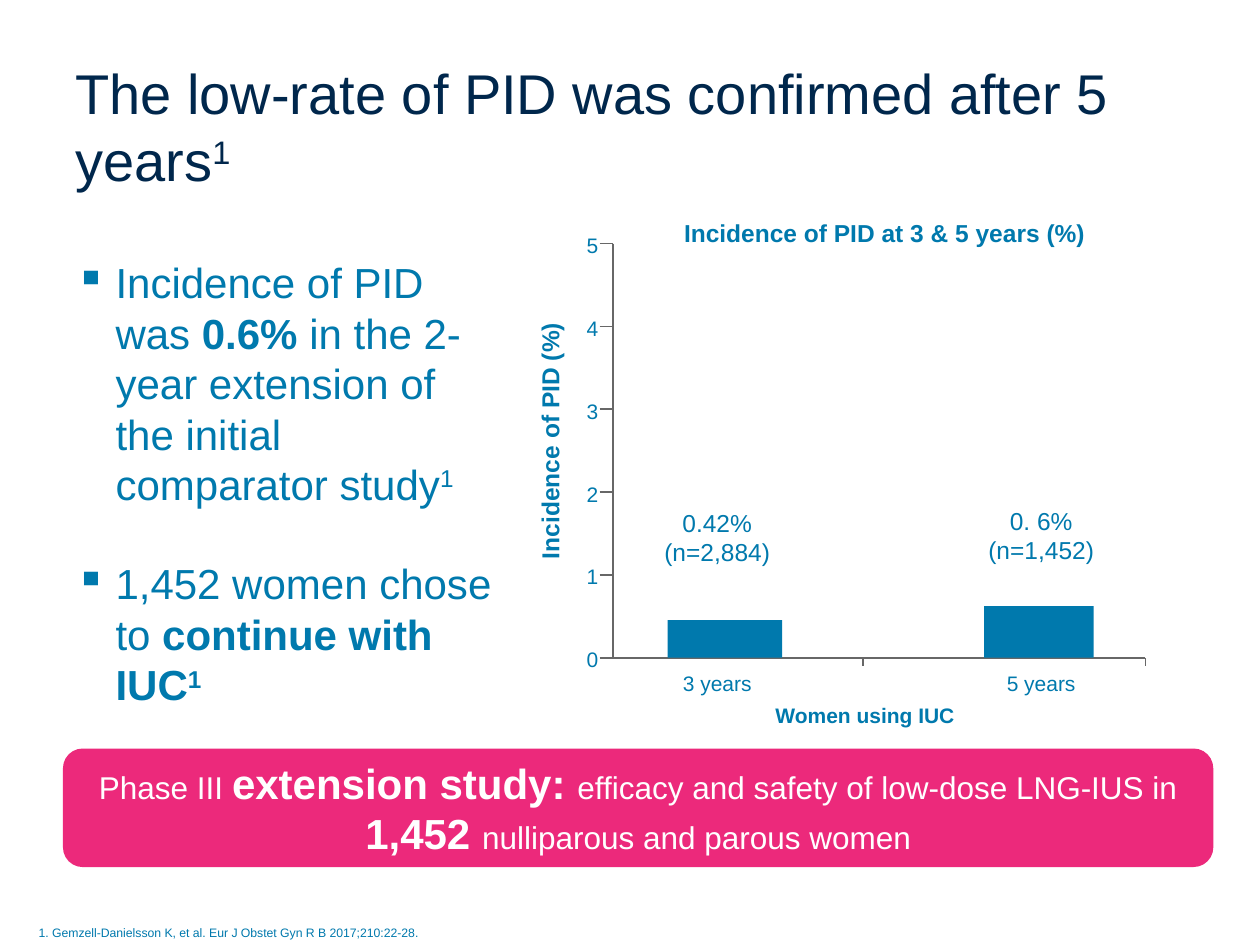
import pptx
import pptx.dml.color
import pptx.enum.shapes
import pptx.enum.text
import pptx.oxml.ns
import pptx.util
from lxml import etree
from pptx.util import Cm

COLORS = {"navy": "00274C", "blue": "0079AD", "pink": "EC297B",
          "white": "FFFFFF", "gray": "676767"}
ALIGN = pptx.enum.text.PP_ALIGN
ANCHOR = pptx.enum.text.MSO_ANCHOR
SHAPE = pptx.enum.shapes.MSO_SHAPE
BOLD = {"bold": True}
SUPER = {"baseline": 30000}


def color(name):
    return pptx.dml.color.RGBColor.from_string(COLORS[name])


class SlideBuilder:
    """Holds the text style and the slide being filled."""

    font_name = "Arial"

    def __init__(self, deck):
        self.page = deck.slides.add_slide(deck.slide_layouts[6])

    def fill_text(self, frame, paragraphs, size, ink="blue", align=ALIGN.LEFT,
                  anchor=ANCHOR.TOP, inset=(0.25, 0.13), wrap=True, bold=False,
                  bullet=None, gap=0):
        """Each paragraph is a list of (text, format values) spans."""
        across, down = (Cm(value) for value in inset)
        layout = {"word_wrap": wrap, "vertical_anchor": anchor,
                  "margin_left": across, "margin_right": across,
                  "margin_top": down, "margin_bottom": down}
        for name, value in layout.items():
            setattr(frame, name, value)
        for index, spans in enumerate(paragraphs):
            para = frame.add_paragraph() if index else frame.paragraphs[0]
            para.alignment = align
            if index:
                para.space_before = pptx.util.Pt(gap)
            if bullet:
                self.add_bullet(para, bullet)
            for text, changes in spans:
                span = para.add_run()
                span.text = text
                span.font.color.rgb = color(ink)
                style = {"name": self.font_name, "size": pptx.util.Pt(size),
                         "bold": bold, **changes}
                baseline = style.pop("baseline", None)
                for name, value in style.items():
                    setattr(span.font, name, value)
                if baseline:
                    span._r.get_or_add_rPr().set("baseline", str(baseline))

    def add_bullet(self, para, character):
        properties = para._p.get_or_add_pPr()
        properties.set("marL", str(Cm(0.81)))
        properties.set("indent", str(Cm(-0.81)))
        mark = etree.SubElement(properties, pptx.oxml.ns.qn("a:buChar"))
        mark.set("char", character)

    def text(self, place, paragraphs, size, rotation=0, **style):
        box = self.page.shapes.add_textbox(*(Cm(value) for value in place))
        box.rotation = rotation
        self.fill_text(box.text_frame, paragraphs, size, **style)

    def label(self, place, words, size, **style):
        """One centred line, or several, without insets."""
        style = {"align": ALIGN.CENTER, "inset": (0, 0), "wrap": False, **style}
        self.text(place, [[(line, {})] for line in words.split("\n")], size, **style)

    def block(self, kind, place, fill):
        shape = self.page.shapes.add_shape(kind, *(Cm(value) for value in place))
        shape.shadow.inherit = False
        shape.fill.solid()
        shape.fill.fore_color.rgb = color(fill)
        shape.line.fill.background()
        return shape

    def line(self, *ends):
        rule = self.page.shapes.add_connector(
            pptx.enum.shapes.MSO_CONNECTOR.STRAIGHT, *(Cm(value) for value in ends))
        rule.line.color.rgb = color("gray")
        rule.line.width = pptx.util.Pt(1)
        etree.SubElement(rule._element.spPr, pptx.oxml.ns.qn("a:effectLst"))


def main():
    deck = pptx.Presentation()
    deck.slide_width, deck.slide_height = Cm(25.4), Cm(19.05)
    slide = SlideBuilder(deck)

    # Title and key points
    slide.text((1.27, 0.84, 22.86, 3.38),
               [[("The low-rate of PID was confirmed after 5 years", {}),
                 ("1", SUPER)]],
               32, ink="navy", anchor=ANCHOR.MIDDLE)
    slide.text((1.27, 5.05, 8.89, 9.07),
               [[("Incidence of PID was ", {}), ("0.6% ", BOLD),
                 ("in the 2-year extension of the initial comparator study", {}),
                 ("1", SUPER)],
                [("1,452 women chose to ", {}), ("continue with IUC", BOLD),
                 ("1", {**BOLD, **SUPER})]],
               24, bullet="▪", gap=28)

    # Axes, with ticks and numbers at equal steps
    axis_x, axis_end, zero_y, step = 12.36, 23.09, 13.26, 1.67
    tick_x = axis_x - 0.27
    slide.line(axis_x, zero_y - 5 * step, axis_x, zero_y)
    slide.line(tick_x, zero_y, axis_end, zero_y)
    for value in range(6):
        y = zero_y - value * step
        if value:
            slide.line(tick_x, y, axis_x, y)
        slide.label((11.73, y - 0.27, 0.36, 0.53), str(value), 12,
                    align=ALIGN.RIGHT, inset=(0.1, 0.05))
    for x in (17.4, axis_end):
        slide.line(x, zero_y, x, zero_y + 0.16)

    # Bars with their category and value labels
    bars = [("3 years", "0.42%\n(n=2,884)", 13.46, 2.31, 0.76, 14.46, 10.24),
            ("5 years", "0. 6%\n(n=1,452)", 19.84, 2.21, 1.04, 20.99, 10.2)]
    for category, result, left, width, height, center, result_y in bars:
        slide.block(SHAPE.RECTANGLE, (left, zero_y - height, width, height), "blue")
        slide.label((center - 0.7, 13.51, 1.4, 0.51), category, 12)
        slide.label((center - 1.08, result_y, 2.16, 1.19), result, 14)

    # Chart title and axis titles
    slide.label((13.69, 4.39, 8.43, 0.61), "Incidence of PID at 3 & 5 years (%) ",
                14, bold=True)
    slide.label((7.82, 8.46, 6.53, 0.86), "Incidence of PID (%)", 14,
                rotation=270, bold=True, wrap=True, inset=(0.25, 0.13))
    slide.label((15.19, 14.17, 4.5, 0.53), "Women using IUC", 12, bold=True)

    # Study banner
    banner = slide.block(SHAPE.ROUNDED_RECTANGLE, (1.27, 15.09, 23.19, 2.39), "pink")
    large = {"size": pptx.util.Pt(24), "bold": True}
    slide.fill_text(banner.text_frame,
                    [[("Phase III ", {}), ("extension study: ", large),
                      ("efficacy and safety of low-dose LNG-IUS in ", {}),
                      ("1,452 ", large), ("nulliparous and parous women", {})]],
                    18, ink="white", align=ALIGN.CENTER, anchor=ANCHOR.MIDDLE)

    # Reference
    slide.text((0.53, 18.52, 19.96, 0.56),
               [[("1. Gemzell-Danielsson K, et al. Eur J Obstet Gyn R B "
                  "2017;210:22-28.", {})]], 7)

    deck.save("out.pptx")


if __name__ == "__main__":
    main()
